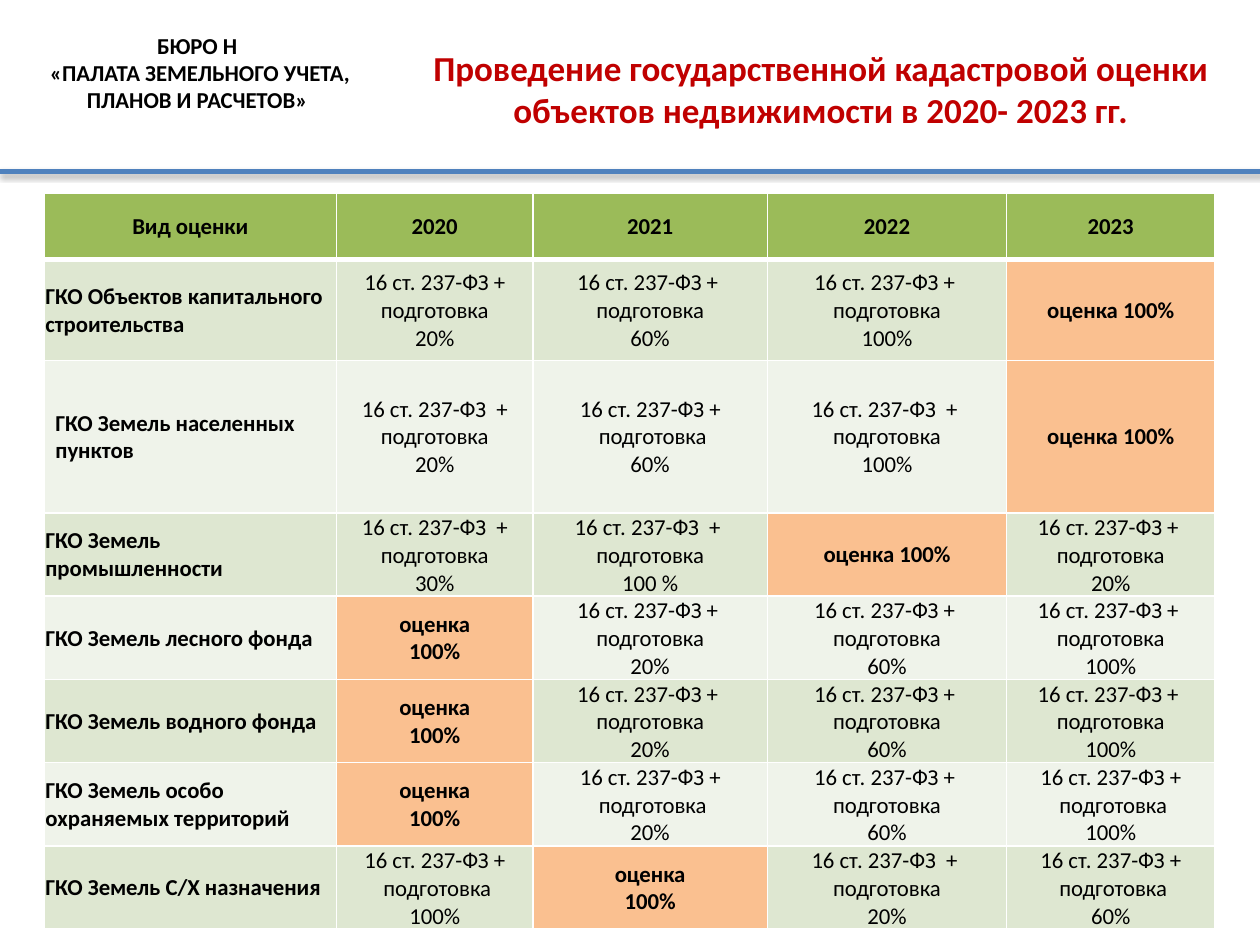
from lxml.etree import SubElement
from pptx import Presentation
from pptx.dml.color import RGBColor
from pptx.enum.shapes import MSO_CONNECTOR
from pptx.enum.text import MSO_ANCHOR, PP_ALIGN
from pptx.oxml import parse_xml
from pptx.oxml.ns import nsdecls, qn
from pptx.util import Inches, Pt

TITLE = "Проведение государственной кадастровой оценки объектов недвижимости в 2020- 2023 гг."
OFFICE = "БЮРО Н\n «ПАЛАТА ЗЕМЕЛЬНОГО УЧЕТА, ПЛАНОВ И РАСЧЕТОВ»"
PLAIN = "16 ст. 237-ФЗ + \nподготовка\v"
TIGHT = "16 ст. 237-ФЗ +\nподготовка\v"
LEAD = "16 ст. 237-ФЗ +\n подготовка\v"
WIDE = "16 ст. 237-ФЗ  + \nподготовка\v"
FLOW = "16 ст. 237-ФЗ  + подготовка\v"
DONE = "оценка 100%"
SPLIT = "оценка\v100%"
ROWS = [
    ("Вид оценки", "2020", "2021", "2022", "2023"),
    ("ГКО Объектов капитального строительства",
     TIGHT + "20%", PLAIN + "60%", PLAIN + "100%", DONE),
    ("ГКО Земель населенных пунктов",
     FLOW + "20%", LEAD + "60%", WIDE + "100%", DONE),
    ("ГКО Земель промышленности",
     FLOW + "30%", WIDE + "100 %", DONE, PLAIN + "20%"),
    ("ГКО Земель лесного фонда",
     SPLIT, PLAIN + "20%", PLAIN + "60%", PLAIN + "100%"),
    ("ГКО Земель водного фонда",
     SPLIT, PLAIN + "20%", PLAIN + "60%", PLAIN + "100%"),
    ("ГКО Земель особо охраняемых территорий",
     SPLIT, LEAD + "20%", PLAIN + "60%", LEAD + "100%"),
    ("ГКО Земель С/Х назначения",
     LEAD + "100%", SPLIT, WIDE + "20%", LEAD + "60%"),
]
WIDTHS = [2.32, 1.56, 1.86, 1.9, 1.65]
HEIGHTS = [0.53, 0.8, 1.21] + [0.66] * 5
HEAD, BANDS, MARK = "9BBB59", ("EFF3EA", "DEE7D1"), "FAC090"
INDENT = {(2, 0): 0.09}


def paint(fill, color):
    """Fill with one solid colour."""
    fill.solid()
    fill.fore_color.rgb = RGBColor.from_string(color)


def style(frame, size, color="000000", bold=True, align=PP_ALIGN.CENTER):
    """Format every paragraph of a text frame."""
    for para in frame.paragraphs:
        para.alignment = align
        para.font.name = "Calibri"
        para.font.size = Pt(size)
        para.font.bold = bold
        para.font.color.rgb = RGBColor.from_string(color)


def border(cell, base):
    """Draw white cell borders with the given bottom width in points."""
    props = cell._tc.get_or_add_tcPr()
    for spot, (side, width) in enumerate(zip("LRTB", (1, 1, 1, base))):
        props.insert(spot, parse_xml(
            f'<a:ln{side} {nsdecls("a")} w="{Pt(width)}"><a:solidFill>'
            f'<a:srgbClr val="FFFFFF"/></a:solidFill></a:ln{side}>'))


def add_title(slide):
    """Place the red slide title."""
    title = slide.shapes.title
    title.left, title.top = Inches(3.03), Inches(0.29)
    title.width, title.height = Inches(6.97), Inches(0.83)
    title.text_frame.text = TITLE
    title.text_frame.vertical_anchor = MSO_ANCHOR.MIDDLE
    style(title.text_frame, 20, "C00000")


def add_office(slide):
    """Place the name of the office."""
    box = slide.shapes.add_textbox(Inches(0.15), Inches(0.2), Inches(2.83), Inches(0.76))
    paint(box.fill, "FFFFFF")
    box.text_frame.word_wrap = True
    box.text_frame.text = OFFICE
    style(box.text_frame, 13)


def add_rule(slide):
    """Draw the blue rule with its soft shadow."""
    rule = slide.shapes.add_connector(
        MSO_CONNECTOR.STRAIGHT, 0, Inches(1.36), Inches(10.02), Inches(1.36))
    paint(rule.line.fill, "4F81BD")
    rule.line.width = Pt(3)
    glow = SubElement(rule._element.spPr, qn("a:effectLst"))
    shade = SubElement(glow, qn("a:outerShdw"), blurRad=str(Pt(3.1)),
                       dist=str(Pt(1.8)), dir="5400000", rotWithShape="0")
    tone = SubElement(shade, qn("a:srgbClr"), val="000000")
    SubElement(tone, qn("a:alpha"), val="35000")


def add_plan(slide):
    """Build the table of work by year."""
    table = slide.shapes.add_table(
        len(ROWS), len(WIDTHS), Inches(0.35), Inches(1.53),
        Inches(sum(WIDTHS)), Inches(sum(HEIGHTS))).table
    for col, width in zip(table.columns, WIDTHS):
        col.width = Inches(width)
    for row, height in zip(table.rows, HEIGHTS):
        row.height = Inches(height)
    for r, texts in enumerate(ROWS):
        for c, text in enumerate(texts):
            cell = table.cell(r, c)
            done = text in (DONE, SPLIT)
            cell.text = text
            cell.vertical_anchor = MSO_ANCHOR.MIDDLE
            cell.margin_left = Inches(INDENT.get((r, c), 0.01))
            cell.margin_top = cell.margin_right = Inches(0.01)
            cell.margin_bottom = 0
            paint(cell.fill, HEAD if r == 0 else MARK if done else BANDS[r % 2])
            border(cell, 3 if r == 0 else 1)
            style(cell.text_frame, 13, bold=r == 0 or c == 0 or done,
                  align=PP_ALIGN.LEFT if r and c == 0 else PP_ALIGN.CENTER)


def main():
    """Build and save the slide."""
    deck = Presentation()
    deck.slide_width, deck.slide_height = Inches(10), Inches(7.5)
    slide = deck.slides.add_slide(deck.slide_layouts[5])
    add_title(slide)
    add_rule(slide)
    add_office(slide)
    add_plan(slide)
    deck.save("out.pptx")


if __name__ == "__main__":
    main()
